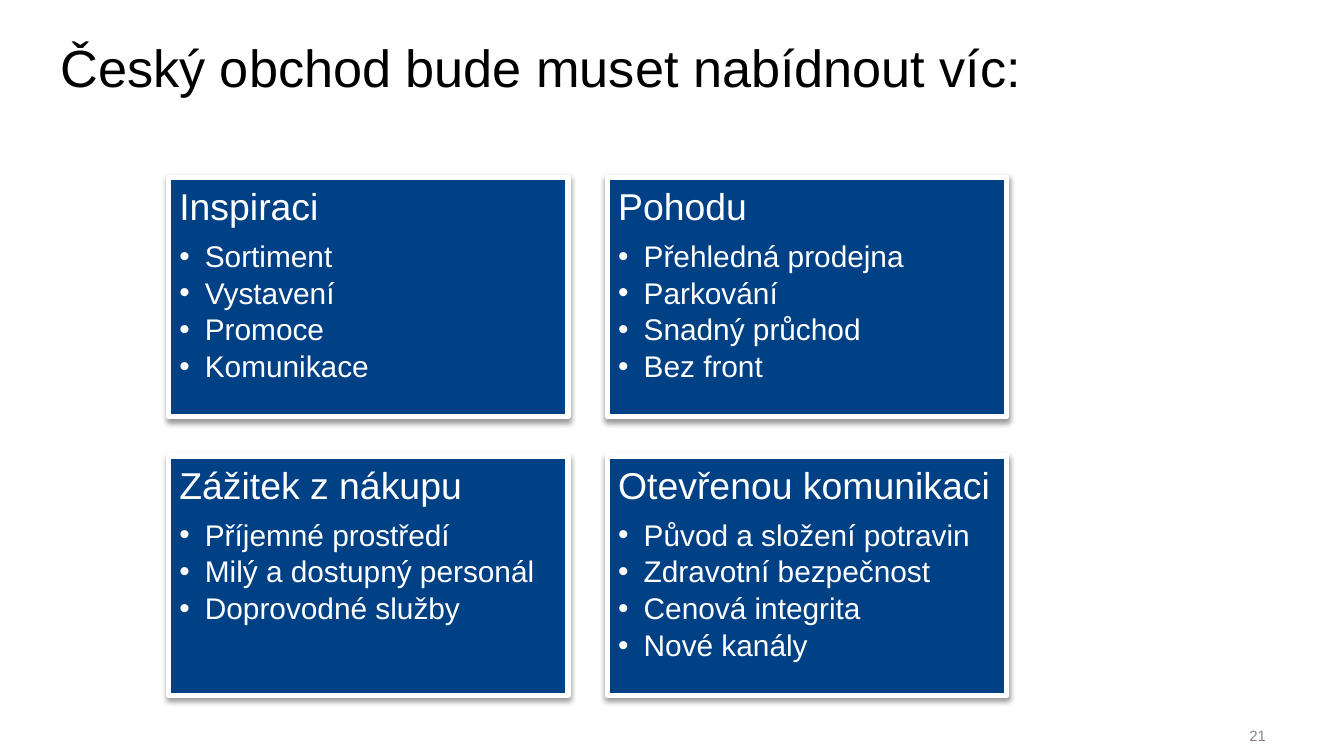
from dataclasses import dataclass

from lxml import etree
from pptx import Presentation
from pptx import util as u
from pptx.dml.color import RGBColor
from pptx.enum import shapes, text
from pptx.oxml import ns

PX = 4572  # EMU per px, 200 px to the inch
FONT = "Arial"
COLORS = {"white": "FFFFFF", "black": "000000", "blue": "004186", "gray": "928580"}

CARD_W, CARD_H = 594, 356
LEFT, TOP = 251, 264
STEP_X, STEP_Y = 653, 415
COLUMNS = 2
INDENT = 38


@dataclass
class Card:
    heading: str
    points: list[str]


CARDS = [
    Card("Inspiraci", ["Sortiment", "Vystavení", "Promoce", "Komunikace"]),
    Card("Pohodu", ["Přehledná prodejna", "Parkování", "Snadný průchod", "Bez front"]),
    Card("Zážitek z nákupu",
         ["Příjemné prostředí", "Milý a dostupný personál", "Doprovodné služby"]),
    Card("Otevřenou komunikaci",
         ["Původ a složení potravin", "Zdravotní bezpečnost", "Cenová integrita",
          "Nové kanály"]),
]


def px(n: int) -> int:
    return u.Emu(n * PX)


def rgb(name: str) -> RGBColor:
    return RGBColor.from_string(COLORS[name])


def set_frame(tf, inset: tuple[int, int, int, int], anchor) -> None:
    """Set wrapping, anchor and the left, top, right and bottom insets."""
    tf.word_wrap = True
    tf.auto_size = text.MSO_AUTO_SIZE.NONE
    tf.vertical_anchor = anchor
    tf.margin_left, tf.margin_top, tf.margin_right, tf.margin_bottom = map(px, inset)


def add_bullet(p) -> None:
    pPr = p._p.get_or_add_pPr()
    pPr.set("marL", str(px(INDENT)))
    pPr.set("indent", str(px(-INDENT)))
    etree.SubElement(pPr, ns.qn("a:buFont"), typeface=FONT)
    etree.SubElement(pPr, ns.qn("a:buChar"), char="•")


def write(p, words: str, *, size: int, color: str, align=text.PP_ALIGN.LEFT,
          spacing: float = 1.0, after: float = 0, bullet: bool = False) -> None:
    if bullet:
        add_bullet(p)
    p.alignment = align
    p.line_spacing = spacing
    p.space_before = u.Pt(0)
    p.space_after = u.Pt(after)
    r = p.add_run()
    r.text = words
    r.font.name = FONT
    r.font.size = u.Pt(size)
    r.font.color.rgb = rgb(color)


def add_shadow(sp) -> None:
    effects = etree.SubElement(sp._element.spPr, ns.qn("a:effectLst"))
    shadow = etree.SubElement(effects, ns.qn("a:outerShdw"), blurRad=str(u.Pt(3.1)),
                              dist=str(u.Pt(1.6)), dir="5400000", rotWithShape="0")
    color = etree.SubElement(shadow, ns.qn("a:srgbClr"), val=COLORS["black"])
    etree.SubElement(color, ns.qn("a:alpha"), val="38000")


def draw_card(s, card: Card, x: int, y: int) -> None:
    sp = s.shapes.add_shape(shapes.MSO_SHAPE.RECTANGLE,
                            px(x), px(y), px(CARD_W), px(CARD_H))
    sp.fill.solid()
    sp.fill.fore_color.rgb = rgb("blue")
    sp.line.color.rgb = rgb("white")
    sp.line.width = u.Pt(3)
    add_shadow(sp)
    tf = sp.text_frame
    set_frame(tf, (16, 16, 16, 16), text.MSO_ANCHOR.TOP)
    write(tf.paragraphs[0], card.heading, size=20, color="white", spacing=0.9, after=7)
    for point in card.points:
        write(tf.add_paragraph(), point, size=16, color="white", spacing=0.9, after=2.4,
              bullet=True)


def draw_title(s, words: str) -> None:
    sp = s.shapes.title
    sp.left, sp.top, sp.width, sp.height = map(px, (70, 42, 1670, 106))
    set_frame(sp.text_frame, (20, 10, 20, 10), text.MSO_ANCHOR.TOP)
    write(sp.text_frame.paragraphs[0], words, size=28, color="black")


def draw_page_number(s, number: str) -> None:
    sp = s.shapes.add_textbox(px(1600), px(1083), px(284), px(24))
    set_frame(sp.text_frame, (0, 0, 0, 0), text.MSO_ANCHOR.MIDDLE)
    write(sp.text_frame.paragraphs[0], number, size=8, color="gray",
          align=text.PP_ALIGN.RIGHT)


def main() -> None:
    prs = Presentation()
    prs.slide_width, prs.slide_height = px(2000), px(1125)
    s = prs.slides.add_slide(prs.slide_layouts[5])
    draw_title(s, "Český obchod bude muset nabídnout víc:")
    for i, card in enumerate(CARDS):
        row, column = divmod(i, COLUMNS)
        draw_card(s, card, LEFT + column * STEP_X, TOP + row * STEP_Y)
    draw_page_number(s, "21")
    prs.save("out.pptx")


if __name__ == "__main__":
    main()
